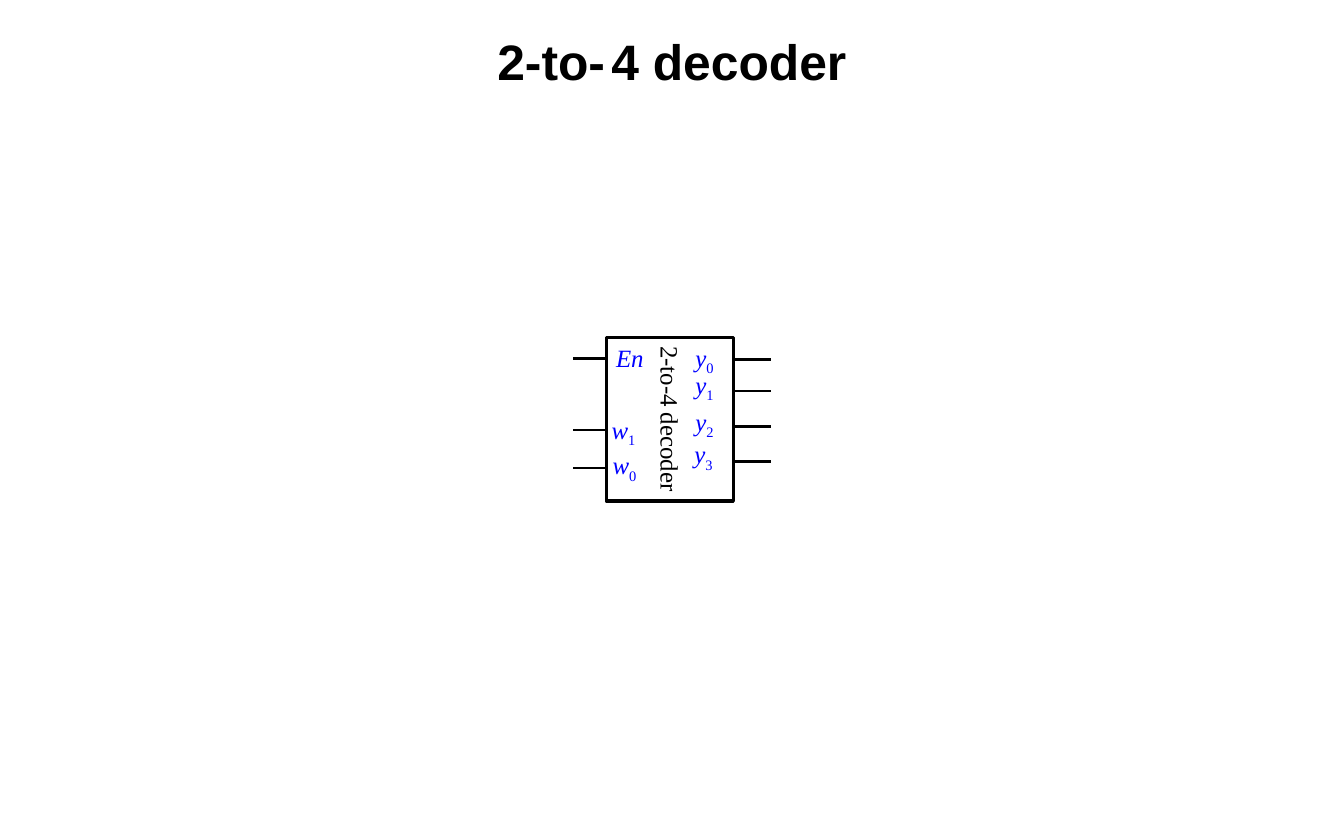
from pptx import Presentation
from pptx.dml.color import RGBColor
from pptx.enum.shapes import MSO_CONNECTOR, MSO_SHAPE
from pptx.enum.text import MSO_ANCHOR, PP_ALIGN
from pptx.oxml.ns import qn
from pptx.util import Pt
from lxml.etree import SubElement

COLORS = {"ink": "000000", "signal": "0000FF"}
TITLE = [("2-to-", 32), (" ", 14), ("4 decoder", 32)]
BLOCK_LABEL = "2-to-4 decoder"
BLOCK = (389.8, 217.1, 81.6, 105)
LEFT_PIN_END, RIGHT_PIN_END = 368.4, 495.4
INPUTS = [
    ("En", "", 396, 220.3, 18, 230.4),
    ("w", "1", 393.1, 266.4, 20.9, 276.5),
    ("w", "0", 393.8, 289.4, 20.9, 301),
]
OUTPUTS = [
    ("y", "0", 447.1, 220.3, 17.3, 231.1),
    ("y", "1", 447.1, 237.6, 17.3, 251.3),
    ("y", "2", 447.1, 261.4, 17.3, 274.3),
    ("y", "3", 446.4, 282.2, 17.3, 296.6),
]
LABEL_HEIGHT = 19.4


def rgb(name):
    return RGBColor.from_string(COLORS[name])


def set_font(font, name, size, color):
    font.name = name
    font.size = Pt(size)
    font.color.rgb = rgb(color)


def add_label(s, x, y, w, color, wrap=False):
    sp = s.shapes.add_textbox(Pt(x), Pt(y), Pt(w), Pt(LABEL_HEIGHT))
    tf = sp.text_frame
    tf.margin_left = tf.margin_right = tf.margin_top = tf.margin_bottom = 0
    tf.word_wrap = wrap
    p = tf.paragraphs[0]
    set_font(p.font, "Times New Roman", 16, color)
    return sp, p


def add_signal(s, name, index, x, y, w):
    sp, p = add_label(s, x, y, w, "signal")
    r = p.add_run()
    r.text = name
    r.font.italic = True
    if index:
        r = p.add_run()
        r.text = index
        r.font._element.set("baseline", "-25000")


def add_pin(s, x1, x2, y):
    sp = s.shapes.add_connector(MSO_CONNECTOR.STRAIGHT, Pt(x1), Pt(y), Pt(x2), Pt(y))
    sp.line.color.rgb = rgb("ink")
    sp.line.width = Pt(1.5)
    SubElement(sp._element.spPr, qn("a:effectLst"))


def main():
    prs = Presentation()
    prs.slide_width, prs.slide_height = Pt(864), Pt(540)
    s = prs.slides.add_slide(prs.slide_layouts[5])

    sp = s.shapes.title
    sp.left, sp.top, sp.width, sp.height = Pt(72), Pt(12), Pt(720), Pt(54)
    tf = sp.text_frame
    tf.vertical_anchor = MSO_ANCHOR.MIDDLE
    p = tf.paragraphs[0]
    p.alignment = PP_ALIGN.CENTER
    set_font(p.font, "Arial", 32, "ink")
    p.font.bold = True
    for text, size in TITLE:
        r = p.add_run()
        r.text = text
        set_font(r.font, "Arial", size, "ink")
        r.font.bold = True

    x, y, w, h = BLOCK
    sp = s.shapes.add_shape(MSO_SHAPE.RECTANGLE, Pt(x), Pt(y), Pt(w), Pt(h))
    sp.shadow.inherit = False
    sp.fill.background()
    sp.line.color.rgb = rgb("ink")
    sp.line.width = Pt(2.25)

    sp, p = add_label(s, 382.3, 261.4, 97.2, "ink", wrap=True)
    sp.rotation = 90
    p.add_run().text = BLOCK_LABEL

    for signals, start, end in (
        (INPUTS, x, LEFT_PIN_END),
        (OUTPUTS, x + w, RIGHT_PIN_END),
    ):
        for name, index, left, top, width, pin_y in signals:
            add_signal(s, name, index, left, top, width)
            add_pin(s, start, end, pin_y)

    prs.save("out.pptx")


if __name__ == "__main__":
    main()
